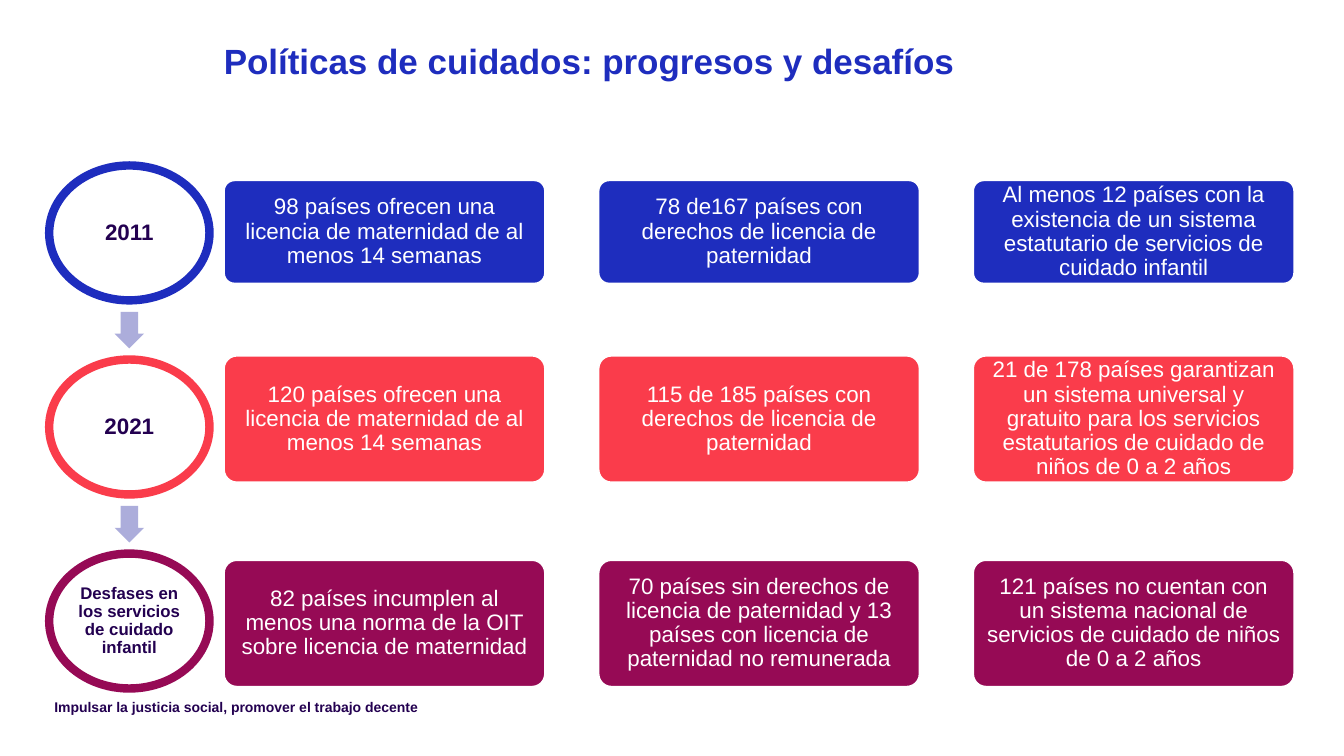
from pptx import Presentation
from pptx.dml.color import RGBColor
from pptx.enum.shapes import MSO_SHAPE
from pptx.enum.text import MSO_ANCHOR, PP_ALIGN
from pptx.util import Cm, Pt

OVAL = MSO_SHAPE.OVAL
CARD = MSO_SHAPE.ROUNDED_RECTANGLE
ARROW = MSO_SHAPE.DOWN_ARROW
MIDDLE = MSO_ANCHOR.MIDDLE
LEFT, CENTER = PP_ALIGN.LEFT, PP_ALIGN.CENTER

BLUE = RGBColor(0x1E, 0x2D, 0xBE)
RED = RGBColor(0xFA, 0x3C, 0x4B)
WINE = RGBColor(0x96, 0x0A, 0x55)
LILAC = RGBColor(0xAC, 0xAD, 0xDB)
INK = RGBColor(0x23, 0x00, 0x50)
WHITE = RGBColor(0xFF, 0xFF, 0xFF)

# label, label size, label inset, colour, card top, card height, card texts
ROWS = [
    ("2011", 16, 0.18, BLUE, 4.55, 2.59, [
        "98 países ofrecen una licencia de maternidad de al menos 14 semanas",
        "78 de167 países con derechos de licencia de paternidad",
        "Al menos 12 países con la existencia de un sistema estatutario "
        "de servicios de cuidado infantil",
    ]),
    ("2021", 16, 0.18, RED, 8.97, 3.18, [
        "120 países ofrecen una licencia de maternidad de al menos 14 semanas",
        "115 de 185 países con derechos de licencia de paternidad",
        "21 de 178 países garantizan un sistema universal y gratuito para los "
        "servicios estatutarios de cuidado de niños de 0 a 2 años",
    ]),
    ("Desfases en los servicios de cuidado infantil", 12, 0.13, WINE, 14.12, 3.18, [
        "82 países incumplen al menos una norma de la OIT sobre licencia "
        "de maternidad",
        "70 países sin derechos de licencia de paternidad y 13 países con "
        "licencia de paternidad no remunerada",
        "121 países no cuentan con un sistema nacional de servicios de "
        "cuidado de niños de 0 a 2 años",
    ]),
]


def write(shape, text, size, color, bold=False, inset=0, align=CENTER, spacing=0.9):
    frame = shape.text_frame
    pad = Cm(inset)
    box = {"word_wrap": True, "margin_left": pad, "margin_right": pad,
           "margin_top": pad, "margin_bottom": pad}
    for name, value in box.items():
        setattr(frame, name, value)
    para = frame.paragraphs[0]
    para.text = text
    para.alignment = align
    para.line_spacing = spacing
    style = {"name": "Arial", "size": Pt(size), "bold": bold}
    for name, value in style.items():
        setattr(para.font, name, value)
    para.font.color.rgb = color


def draw(kind, left, top, width, height, fill=None, line=None, weight=1):
    """Add a flat shape, given in centimetres, with an optional fill and line."""
    shape = slide.shapes.add_shape(kind, Cm(left), Cm(top), Cm(width), Cm(height))
    shape.shadow.inherit = False
    shape.text_frame.vertical_anchor = MIDDLE
    for part, color in ((shape.fill, fill), (shape.line.fill, line)):
        if color is None:
            part.background()
        else:
            part.solid()
            part.fore_color.rgb = color
    if line is not None:
        shape.line.width = Pt(weight)
    return shape


deck = Presentation()
deck.slide_width, deck.slide_height = Cm(33.87), Cm(19.05)
slide = deck.slides.add_slide(deck.slide_layouts[6])

title = slide.shapes.add_textbox(Cm(5.64), Cm(1.12), Cm(27), Cm(2))
write(title, "Políticas de cuidados: progresos y desafíos", 25, BLUE,
      bold=True, align=LEFT)

for row, (label, size, inset, color, top, height, texts) in enumerate(ROWS):
    ring_top = 4.17 + 4.89 * row
    ring = draw(OVAL, 1.24, ring_top, 4.04, 3.4, line=color, weight=6)
    write(ring, label, size, INK, bold=True, inset=inset)
    if row < len(ROWS) - 1:
        arrow = draw(ARROW, 2.89, ring_top + 3.69, 0.74, 0.92, fill=LILAC)
        arrow.adjustments[0] = 0.6
        arrow.adjustments[1] = 0.5
    for col, text in enumerate(texts):
        card = draw(CARD, 5.65 + 9.44 * col, top, 8.08, height, color, WHITE)
        card.adjustments[0] = 0.1
        write(card, text, 16, WHITE, inset=0.18)

footer = slide.shapes.add_textbox(Cm(1.37), Cm(17.6), Cm(15.57), Cm(0.5))
write(footer, "Impulsar la justicia social, promover el trabajo decente", 10, INK,
      bold=True, align=LEFT, spacing=1.0)

deck.save("out.pptx")
